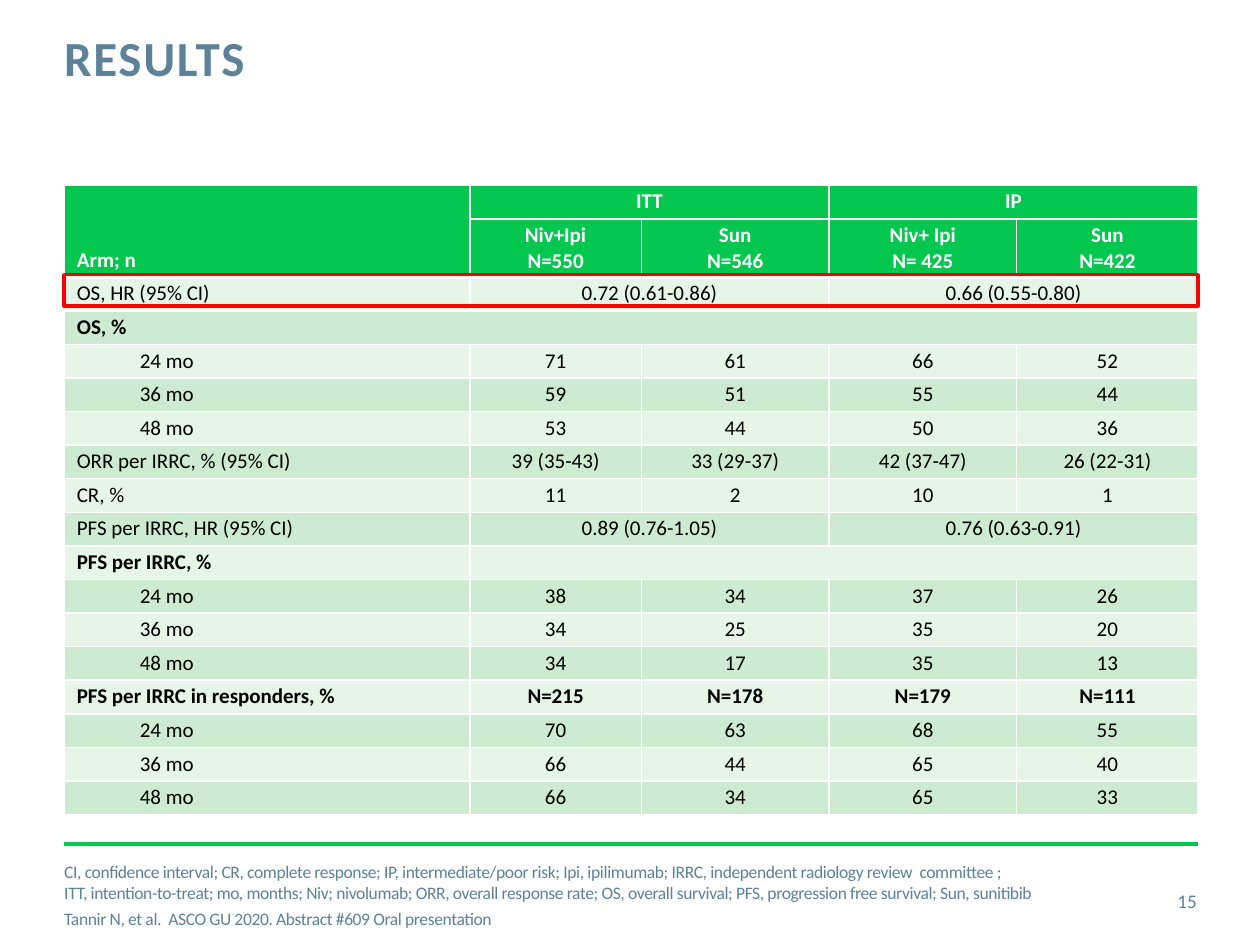
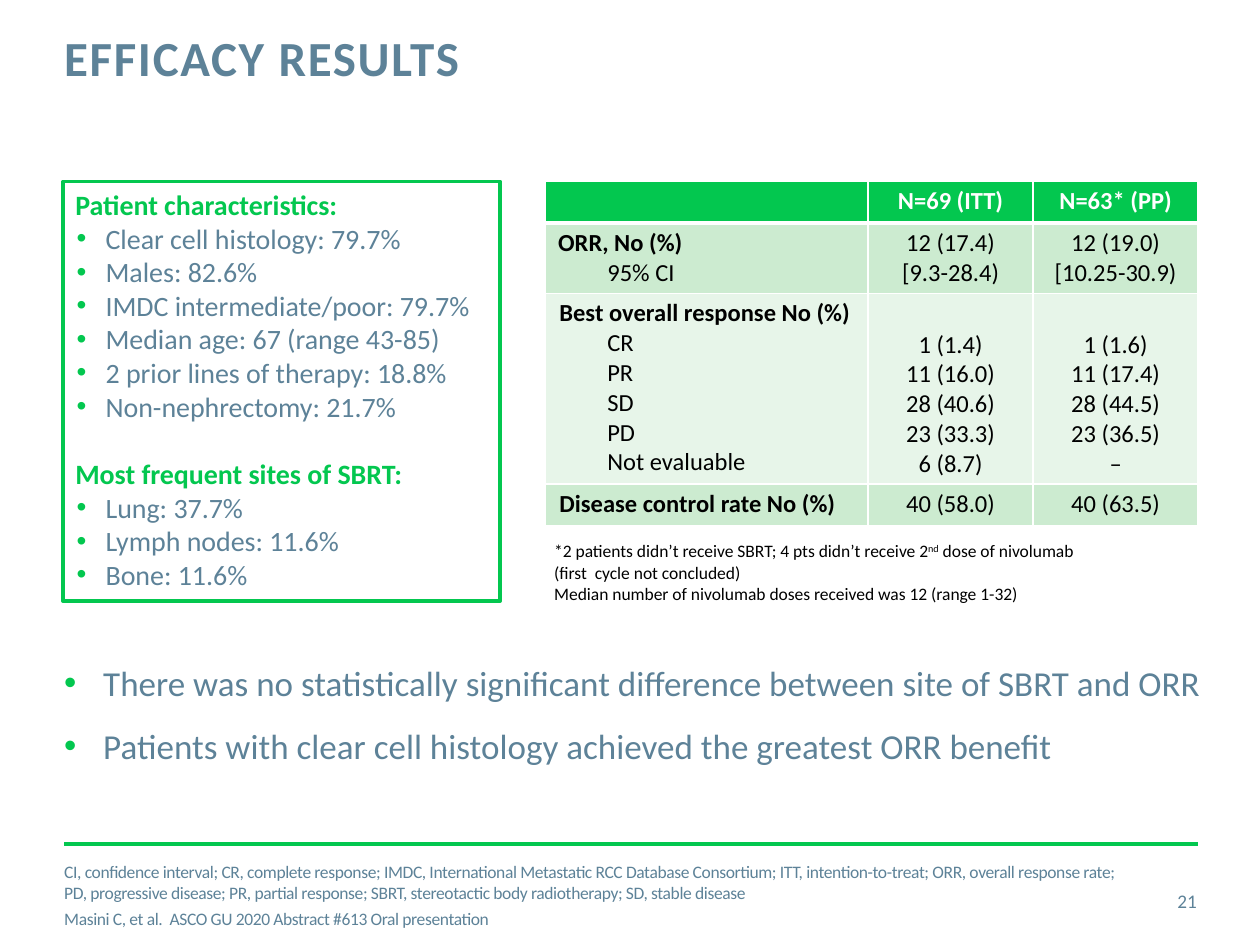
from copy import deepcopy
from dataclasses import dataclass

from lxml import etree
from pptx import Presentation
from pptx.dml.color import RGBColor
from pptx.enum.shapes import MSO_CONNECTOR, MSO_SHAPE
from pptx.enum.text import MSO_ANCHOR, PP_ALIGN
from pptx.oxml.ns import qn
from pptx.util import Inches, Pt

LEFT, CENTER, RIGHT = PP_ALIGN.LEFT, PP_ALIGN.CENTER, PP_ALIGN.RIGHT
TOP, MIDDLE, BOTTOM = MSO_ANCHOR.TOP, MSO_ANCHOR.MIDDLE, MSO_ANCHOR.BOTTOM
STRAIGHT, RECTANGLE = MSO_CONNECTOR.STRAIGHT, MSO_SHAPE.RECTANGLE


@dataclass(frozen=True)
class Theme:
    """Colours and type sizes shared by the slides."""
    font: str = "Calibri"
    green: str = "03C74F"
    slate: str = "5D8298"
    black: str = "000000"
    white: str = "FFFFFF"
    red: str = "FF0000"
    band_dark: str = "CCEBD0"
    band_light: str = "E7F5E9"
    title: int = 28
    message: int = 20
    panel: int = 16
    cell: int = 14
    dense_cell: int = 12
    number: int = 11
    note: int = 10


THEME = Theme()
MARGIN = 0.51


@dataclass
class Para:
    """One paragraph; text between carets is raised, newlines break lines."""
    text: str
    size: int
    color: str = THEME.slate
    bold: bool = False
    align: PP_ALIGN = LEFT
    before: float = 0
    left: float = 0
    hang: float = 0
    tracking: float = 0
    leading: float = 0


def solid(parent, tag, color):
    """Append an XML element holding a colour."""
    holder = etree.SubElement(parent, qn(tag))
    etree.SubElement(holder, qn("a:srgbClr"), val=color)
    return holder


def add_run(paragraph, text, para, raised):
    """Add one styled run."""
    run = paragraph.add_run()
    run.text = text
    run.font.name, run.font.size, run.font.bold = THEME.font, Pt(para.size), para.bold
    run.font.color.rgb = RGBColor.from_string(para.color)
    props = run.font._element
    if para.tracking:
        props.set("spc", str(int(para.tracking * 100)))
    if raised:
        props.set("baseline", "30000")
    return props


def write(frame, paras):
    """Write paragraphs into a text frame."""
    for index, para in enumerate(paras):
        paragraph = frame.add_paragraph() if index else frame.paragraphs[0]
        paragraph.alignment = para.align
        if para.leading:
            paragraph.line_spacing = Pt(para.leading)
        if para.before:
            paragraph.space_before = Pt(para.before)
        props = paragraph._p.get_or_add_pPr()
        props.set("marL", str(Inches(para.left)))
        props.set("indent", str(-Inches(para.hang)))
        if para.hang:
            solid(props, "a:buClr", THEME.green)
            etree.SubElement(props, qn("a:buFont"), typeface="Arial")
            etree.SubElement(props, qn("a:buChar"), char="•")
        for part, text in enumerate(para.text.split("^")):
            for number, line in enumerate(text.split("\n")):
                if number:
                    paragraph.add_line_break()
                    paragraph._p[-1].append(deepcopy(style))
                style = add_run(paragraph, line, para, part % 2)


def add_text(slide, box, paras, anchor=TOP, insets=(0, 0)):
    """Place a wrapped text box."""
    frame = slide.shapes.add_textbox(*map(Inches, box)).text_frame
    frame.word_wrap, frame.vertical_anchor = True, anchor
    frame.margin_left = frame.margin_right = Inches(insets[0])
    frame.margin_top = frame.margin_bottom = Inches(insets[1])
    write(frame, paras)


def add_outline(slide, box, color):
    """Place an unfilled rectangle with a 2 pt outline."""
    outline = slide.shapes.add_shape(RECTANGLE, *map(Inches, box))
    outline.shadow.inherit = False
    outline.fill.background()
    outline.line.color.rgb = RGBColor.from_string(color)
    outline.line.width = Pt(2)
    return outline


def add_frame(slide, title, notes, number):
    """Add the title, footer rule, footnotes and slide number."""
    add_text(slide, (MARGIN, 0.27, 7.17, 0.88),
             [Para(title, THEME.title, bold=True, tracking=1, leading=30)])
    rule = slide.shapes.add_connector(
        STRAIGHT, Inches(MARGIN), Inches(6.7), Inches(MARGIN + 9), Inches(6.7))
    rule.line.color.rgb = RGBColor.from_string(THEME.green)
    rule.line.width = Pt(2)
    etree.SubElement(rule._element.spPr, qn("a:effectLst"))
    add_text(slide, (MARGIN, 6.8, 8.35, 0.61),
             [Para(note, THEME.note, tracking=-0.2, before=3 * bool(index))
              for index, note in enumerate(notes)], MIDDLE)
    add_text(slide, (8.86, 6.95, 0.64, 0.4),
             [Para(number, THEME.number, align=RIGHT)], MIDDLE)


def fill_cell(cell, paras, size, fill, edges, inset):
    """Style one table cell and write its paragraphs."""
    cell.margin_left = cell.margin_right = Inches(0.1)
    cell.margin_top = cell.margin_bottom = Inches(inset)
    props = cell._tc.get_or_add_tcPr()
    for side, width in edges.items():
        edge = etree.SubElement(props, qn(f"a:ln{side}"), w=str(Pt(width)))
        solid(edge, "a:solidFill", THEME.white)
    cell.fill.solid()
    cell.fill.fore_color.rgb = RGBColor.from_string(fill)
    if paras:
        write(cell.text_frame, paras)
    else:
        etree.SubElement(cell.text_frame.paragraphs[0]._p,
                         qn("a:endParaRPr"), sz=str(size * 100))


def add_grid(slide, origin, widths, heights, grid, size, bands, headers, rule, inset):
    """Place a banded table; None joins a cell to the one on its left."""
    table = slide.shapes.add_table(
        len(heights), len(widths), *map(Inches, (*origin, sum(widths), sum(heights)))).table
    table.first_row = table.horz_banding = False
    for column, width in zip(table.columns, widths):
        column.width = Inches(width)
    for r, (row, height) in enumerate(zip(grid, heights)):
        table.rows[r].height = Inches(height)
        fill = THEME.green if r < headers else bands[(r - headers) % 2]
        edges = {"L": 1, "R": 1, "T": rule if r == headers else 1,
                 "B": rule if r == headers - 1 else 1}
        for c, paras in enumerate(row):
            fill_cell(table.cell(r, c), paras, size, fill, edges, inset)
        starts = [c for c, paras in enumerate(row) if paras is not None]
        for start, end in zip(starts, starts[1:] + [len(row)]):
            if end - start > 1:
                table.cell(r, start).merge(table.cell(r, end - 1))
    return table


SURVIVAL_ROWS = [
    ("Arm; n", "ITT", None, "IP", None),
    ("", "Niv+Ipi\nN=550", "Sun\nN=546", "Niv+ Ipi\nN= 425", "Sun\nN=422"),
    ("OS, HR (95% CI)", "0.72 (0.61-0.86)", None, "0.66 (0.55-0.80)", None),
    ("OS, %", None, None, None, None),
    ("24 mo", "71", "61", "66", "52"),
    ("36 mo", "59", "51", "55", "44"),
    ("48 mo", "53", "44", "50", "36"),
    ("ORR per IRRC, % (95% CI)", "39 (35-43)", "33 (29-37)", "42 (37-47)", "26 (22-31)"),
    ("CR, %", "11", "2", "10", "1"),
    ("PFS per IRRC, HR (95% CI)", "0.89 (0.76-1.05)", None, "0.76 (0.63-0.91)", None),
    ("PFS per IRRC, %", "", None, None, None),
    ("24 mo", "38", "34", "37", "26"),
    ("36 mo", "34", "25", "35", "20"),
    ("48 mo", "34", "17", "35", "13"),
    ("PFS per IRRC in responders, %", "N=215", "N=178", "N=179", "N=111"),
    ("24 mo", "70", "63", "68", "55"),
    ("36 mo", "66", "44", "65", "40"),
    ("48 mo", "66", "34", "65", "33"),
]
SECTIONS = ("OS, %", "PFS per IRRC, %", "PFS per IRRC in responders, %")


def survival_cell(row, column, text):
    """Return the paragraphs of one survival table cell."""
    if not text:
        return None if text is None else []
    header = row < 2
    return [Para(line, THEME.dense_cell, THEME.white if header else THEME.black,
                 header or SURVIVAL_ROWS[row][0] in SECTIONS,
                 CENTER if column else LEFT, left=0.5 * line.endswith(" mo"))
            for line in text.split("\n")]


def add_survival_table(slide, left, top):
    """Place the survival table and mark its hazard ratio row."""
    widths = [3.22, 1.36, 1.49, 1.49, 1.44]
    headers = [0.27, 0.44]
    body_rows = len(SURVIVAL_ROWS) - len(headers)
    heights = headers + [(4.98 - sum(headers)) / body_rows] * body_rows
    grid = [[survival_cell(r, c, text) for c, text in enumerate(row)]
            for r, row in enumerate(SURVIVAL_ROWS)]
    table = add_grid(slide, (left, top), widths, heights, grid, THEME.dense_cell,
                     (THEME.band_light, THEME.band_dark), 2, 2.25, 0.03)
    table.cell(0, 0).merge(table.cell(1, 0))
    table.cell(0, 0).vertical_anchor = BOTTOM
    add_outline(slide, (left, top + sum(headers), sum(widths), 0.25), THEME.red)


PATIENT_GROUPS = {
    "Patient characteristics:": (
        "Clear cell histology: 79.7%", "Males: 82.6%", "IMDC intermediate/poor: 79.7%",
        "Median age: 67 (range 43-85)", "2 prior lines of therapy: 18.8%",
        "Non-nephrectomy: 21.7%"),
    "Most frequent sites of SBRT:": (
        "Lung: 37.7%", "Lymph nodes: 11.6%", "Bone: 11.6%"),
}


def add_patient_panel(slide, box):
    """Place the outlined panel of patient groups."""
    paras = []
    for heading, facts in PATIENT_GROUPS.items():
        paras.append(Para(heading, THEME.panel, THEME.green, True,
                          before=19.5 if paras else 0))
        paras += [Para(fact, THEME.panel, left=0.24, hang=0.23) for fact in facts]
    frame = add_outline(slide, box, THEME.green).text_frame
    frame.word_wrap, frame.vertical_anchor = True, TOP
    write(frame, paras)


RESPONSE_ROWS = [
    ("", "", "N=69 (ITT)", "N=63* (PP)"),
    ("ORR, No (%)", "95% CI", "12 (17.4)\n[9.3-28.4)", "12 (19.0)\n[10.25-30.9)"),
    ("Best overall response No (%)", "CR\nPR\nSD\nPD\nNot evaluable",
     "1 (1.4)\n11 (16.0)\n28 (40.6)\n23 (33.3)\n6 (8.7)",
     "1 (1.6)\n11 (17.4)\n28 (44.5)\n23 (36.5)\n–"),
    ("Disease control rate No (%)", "", "40 (58.0)", "40 (63.5)"),
]


def add_response_table(slide, left, top):
    """Place the response table and the note under it."""
    grid = []
    for r, (heading, details, *values) in enumerate(RESPONSE_ROWS):
        label = [Para(heading, THEME.cell, THEME.black, True, left=0.01 * (r > 1))] if heading else []
        if details:
            label.append(Para(details, THEME.cell, THEME.black, left=0.39))
        color = THEME.black if r else THEME.white
        grid.append([label] + [[Para(value, THEME.cell, color, not r, CENTER)]
                               for value in values])
    heights = [0.33, 0.56, 1.51, 0.33]
    table = add_grid(slide, (left, top), [2.56, 1.31, 1.31], heights, grid, THEME.cell,
                     (THEME.band_dark, THEME.band_light), 1, 3, 0.04)
    for column in (1, 2):
        table.cell(2, column).vertical_anchor = BOTTOM
    notes = ("*2 patients didn’t receive SBRT; 4 pts didn’t receive 2^nd^ dose of nivolumab\n"
             "(first  cycle not concluded)",
             "Median number of nivolumab doses received was 12 (range 1-32)")
    add_text(slide, (left - 0.03, top + sum(heights) + 0.07, 5.25, 0.61),
             [Para(note, THEME.note, THEME.black) for note in notes], insets=(0.1, 0.05))


def add_messages(slide, box):
    """Place the concluding bullets."""
    messages = ("There was no statistically significant difference between site of SBRT and ORR",
                "Patients with clear cell histology achieved the greatest ORR benefit")
    add_text(slide, box, [Para(message, THEME.message, left=0.31, hang=0.31,
                               before=12 * bool(index))
                          for index, message in enumerate(messages)])


def main():
    """Build both slides and save the deck."""
    deck = Presentation()
    deck.slide_width, deck.slide_height = Inches(10), Inches(7.5)
    blank = deck.slide_layouts[6]

    results = deck.slides.add_slide(blank)
    add_frame(results, "RESULTS", (
        "CI, confidence interval; CR, complete response; IP, intermediate/poor risk; Ipi, "
        "ipilimumab; IRRC, independent radiology review  committee ;\n"
        "ITT, intention-to-treat; mo, months; Niv; nivolumab; ORR, overall response rate; "
        "OS, overall survival; PFS, progression free survival; Sun, sunitibib",
        "Tannir N, et al.  ASCO GU 2020. Abstract #609 Oral presentation"), "15")
    add_survival_table(results, MARGIN, 1.47)

    efficacy = deck.slides.add_slide(blank)
    add_frame(efficacy, "EFFICACY RESULTS", (
        "CI, confidence interval; CR, complete response; IMDC, International Metastatic RCC "
        "Database Consortium; ITT, intention-to-treat; ORR, overall response rate; "
        "PD, progressive disease; PR, partial response; SBRT, stereotactic body radiotherapy; "
        "SD, stable disease",
        "Masini C, et al.  ASCO GU 2020 Abstract #613 Oral presentation"), "21")
    add_patient_panel(efficacy, (0.5, 1.44, 3.47, 3.33))
    add_response_table(efficacy, 4.33, 1.44)
    add_messages(efficacy, (MARGIN, 5.25, 9.07, 1.27))

    deck.save("out.pptx")


if __name__ == "__main__":
    main()
